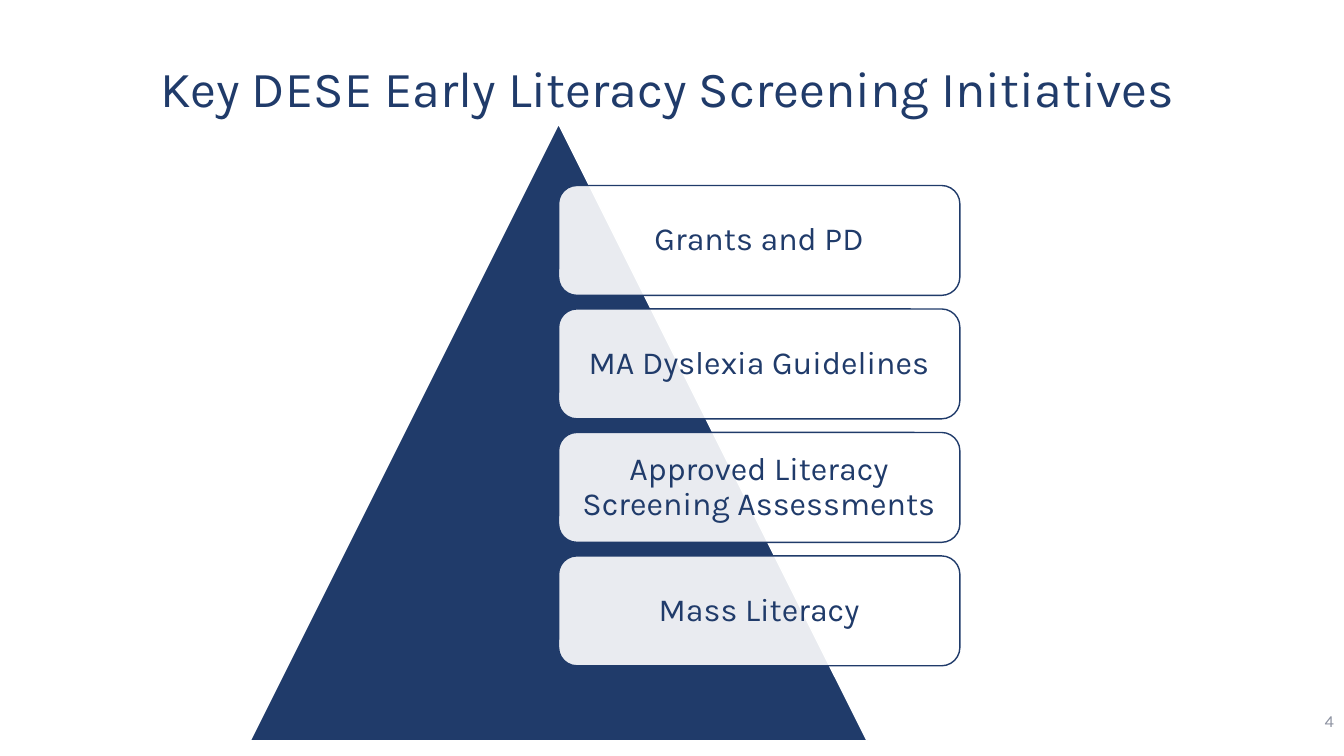
from dataclasses import dataclass

from lxml import etree
from pptx import Presentation
from pptx import util as u
from pptx.dml.color import RGBColor
from pptx.enum import shapes, text
from pptx.oxml import ns


@dataclass(frozen=True)
class Theme:
    font: str = "Karla"
    navy: str = "203B6A"
    white: str = "FFFFFF"
    gray: str = "8D92A1"
    title: int = 36
    label: int = 23
    small: int = 12


THEME = Theme()
LABELS = ["Grants and PD", "MA Dyslexia Guidelines",
          "Approved Literacy Screening Assessments", "Mass Literacy"]


def color(code):
    return RGBColor.from_string(code)


def write(shape, words, size, tone, align, anchor):
    """Fill a shape with one paragraph and return it."""
    frame = shape.text_frame
    frame.word_wrap = True
    frame.vertical_anchor = anchor
    para = frame.paragraphs[0]
    para.alignment = align
    run = para.add_run()
    run.text = words
    run.font.name = THEME.font
    run.font.size = u.Pt(size)
    run.font.color.rgb = color(tone)
    return para


def add_text(slide, box, *style):
    shape = slide.shapes.add_textbox(*map(u.Inches, box))
    write(shape, *style)


def add_form(slide, kind, box, fill, line):
    shape = slide.shapes.add_shape(kind, *map(u.Inches, box))
    shape.shadow.inherit = False
    shape.fill.solid()
    shape.fill.fore_color.rgb = color(fill)
    shape.line.color.rgb = color(line)
    shape.line.width = u.Pt(1)
    return shape


def add_card(slide, box, words):
    """Draw a slightly transparent rounded card with its label."""
    card = add_form(slide, shapes.MSO_SHAPE.ROUNDED_RECTANGLE, box,
                    THEME.white, THEME.navy)
    tint = card.fill._xPr.find(ns.qn("a:solidFill"))[0]
    etree.SubElement(tint, ns.qn("a:alpha")).set("val", "90000")
    frame = card.text_frame
    frame.margin_left = frame.margin_right = u.Inches(0.1)
    frame.margin_top = frame.margin_bottom = u.Inches(0.1)
    para = write(card, words, THEME.label, THEME.navy,
                 text.PP_ALIGN.CENTER, text.MSO_ANCHOR.MIDDLE)
    para.line_spacing = 0.9


def main():
    deck = Presentation()
    deck.slide_width = u.Inches(13.33)
    deck.slide_height = u.Inches(7.5)
    slide = deck.slides.add_slide(deck.slide_layouts[6])

    # Page number
    add_text(slide, (10.33, 6.95, 3, 0.4), "4", THEME.small, THEME.gray,
             text.PP_ALIGN.RIGHT, text.MSO_ANCHOR.MIDDLE)

    # Pyramid
    add_form(slide, shapes.MSO_SHAPE.ISOSCELES_TRIANGLE,
             (2.48, 1.23, 6.12, 6.12), THEME.navy, THEME.white)

    # Initiative cards, evenly stacked
    top, step = 1.84, 1.225
    for row, words in enumerate(LABELS):
        add_card(slide, (5.54, top + row * step, 3.98, 1.09), words)

    # Title
    add_text(slide, (1.49, 0.52, 10.4, 0.71),
             "Key DESE Early Literacy Screening Initiatives",
             THEME.title, THEME.navy,
             text.PP_ALIGN.LEFT, text.MSO_ANCHOR.TOP)

    deck.save("out.pptx")


if __name__ == "__main__":
    main()
